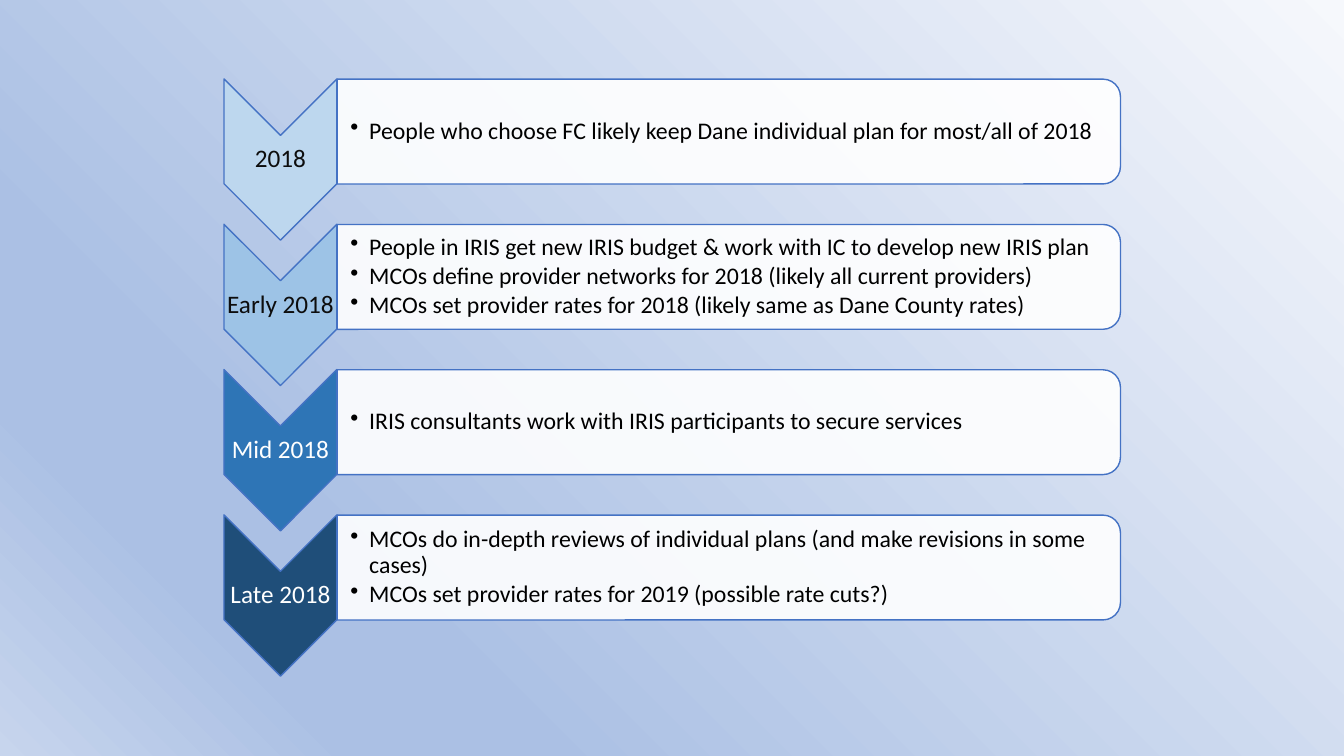
from pptx import Presentation
from pptx.dml.color import RGBColor
from pptx.enum import shapes, text
from pptx.oxml import ns, parse_xml
from pptx.util import Pt

STEPS = [
    ("2018", "BDD7EE", "0D0D0D", [
        "People who choose FC likely keep Dane individual plan for most/all of 2018"]),
    ("Early 2018", "9DC3E6", "0D0D0D", [
        "People in IRIS get new IRIS budget & work with IC to develop new IRIS plan",
        "MCOs define provider networks for 2018 (likely all current providers)",
        "MCOs set provider rates for 2018 (likely same as Dane County rates)"]),
    ("Mid 2018", "2E75B6", "FFFFFF", [
        "IRIS consultants work with IRIS participants to secure services"]),
    ("Late 2018", "1F4E79", "FFFFFF", [
        "MCOs do in-depth reviews of individual plans (and make revisions in some cases)",
        "MCOs set provider rates for 2019 (possible rate cuts?)"]),
]
BACKGROUND_STOPS = [(0, "F6F8FC"), (74, "ABC0E4"), (83, "ABC0E4"), (100, "C7D5ED")]
STEP_PITCH = 103.8
CHEVRON_CENTER = (200.3, 114)
PANEL_CENTER = (520.6, 94)


def color(value):
    return RGBColor.from_string(value)


def set_all(target, values):
    for name, value in values.items():
        setattr(target, name, value)


def paint_background(page):
    fill = page.background.fill
    fill.gradient()
    fill.gradient_angle = 225
    stops = page.element.find(".//" + ns.qn("a:gsLst"))
    stops.clear()
    for percent, value in BACKGROUND_STOPS:
        stops.append(parse_xml(
            f'<a:gs {ns.nsdecls("a")} pos="{percent * 1000}"><a:srgbClr val="{value}"/></a:gs>'))


def add_turned_shape(page, kind, center, width, height, fill, opacity=100):
    """Add a preset shape turned a quarter clockwise about its center."""
    x, y = center
    shape = page.shapes.add_shape(
        kind, Pt(x - width / 2), Pt(y - height / 2), Pt(width), Pt(height))
    shape.rotation = 90
    shape.shadow.inherit = False
    shape.fill.solid()
    shape.fill.fore_color.rgb = color(fill)
    shape.line.color.rgb = color("4472C4")
    shape.line.width = Pt(1)
    if opacity < 100:
        solid = shape.fill.fore_color._xFill.find(ns.qn("a:srgbClr"))
        solid.append(parse_xml(f'<a:alpha {ns.nsdecls("a")} val="{opacity * 1000}"/>'))


def add_bullet(para):
    props = para._p.get_or_add_pPr()
    set_all(para, {"space_after": Pt(2.5)})
    props.set("marL", str(Pt(13.5)))
    props.set("indent", str(-Pt(13.5)))
    props.append(parse_xml(f'<a:buChar {ns.nsdecls("a")} char="•"/>'))


def add_text(page, left, top, width, height, lines, size, ink, inset=0.9, bullets=False):
    box = page.shapes.add_textbox(Pt(left), Pt(top), Pt(width), Pt(height))
    frame = box.text_frame
    set_all(frame, {
        "word_wrap": True, "vertical_anchor": text.MSO_ANCHOR.MIDDLE,
        "margin_left": Pt(inset), "margin_right": Pt(0.9),
        "margin_top": Pt(0.9), "margin_bottom": Pt(0.9)})
    for number, line in enumerate(lines):
        para = frame.add_paragraph() if number else frame.paragraphs[0]
        para.line_spacing = 0.9
        para.alignment = text.PP_ALIGN.LEFT if bullets else text.PP_ALIGN.CENTER
        if bullets:
            add_bullet(para)
        span = para.add_run()
        span.text = line
        set_all(span.font, {"name": "Calibri", "size": Pt(size)})
        span.font.color.rgb = color(ink)


def add_step(page, offset, label, fill, ink, lines):
    kinds = shapes.MSO_SHAPE
    # Chevron with its date
    x, y = CHEVRON_CENTER
    add_turned_shape(page, kinds.CHEVRON, (x, y + offset), 115.2, 80.64, fill)
    add_text(page, x - 40.32, y + offset - 17.28, 80.64, 34.56, [label], 18, ink)
    # Panel with its bullets
    x, y = PANEL_CENTER
    add_turned_shape(page, kinds.ROUND_2_SAME_RECTANGLE, (x, y + offset),
                     74.88, 559.44, "FFFFFF", opacity=90)
    add_text(page, x - 279.72, y + offset - 33.84, 555.84, 67.68, lines, 17, "000000",
             inset=9.36, bullets=True)


def main():
    deck = Presentation()
    set_all(deck, {"slide_width": Pt(960), "slide_height": Pt(540)})
    page = deck.slides.add_slide(deck.slide_layouts[6])
    paint_background(page)
    # Timeline, one row per period
    for number, step in enumerate(STEPS):
        add_step(page, number * STEP_PITCH, *step)
    deck.save("out.pptx")


if __name__ == "__main__":
    main()
